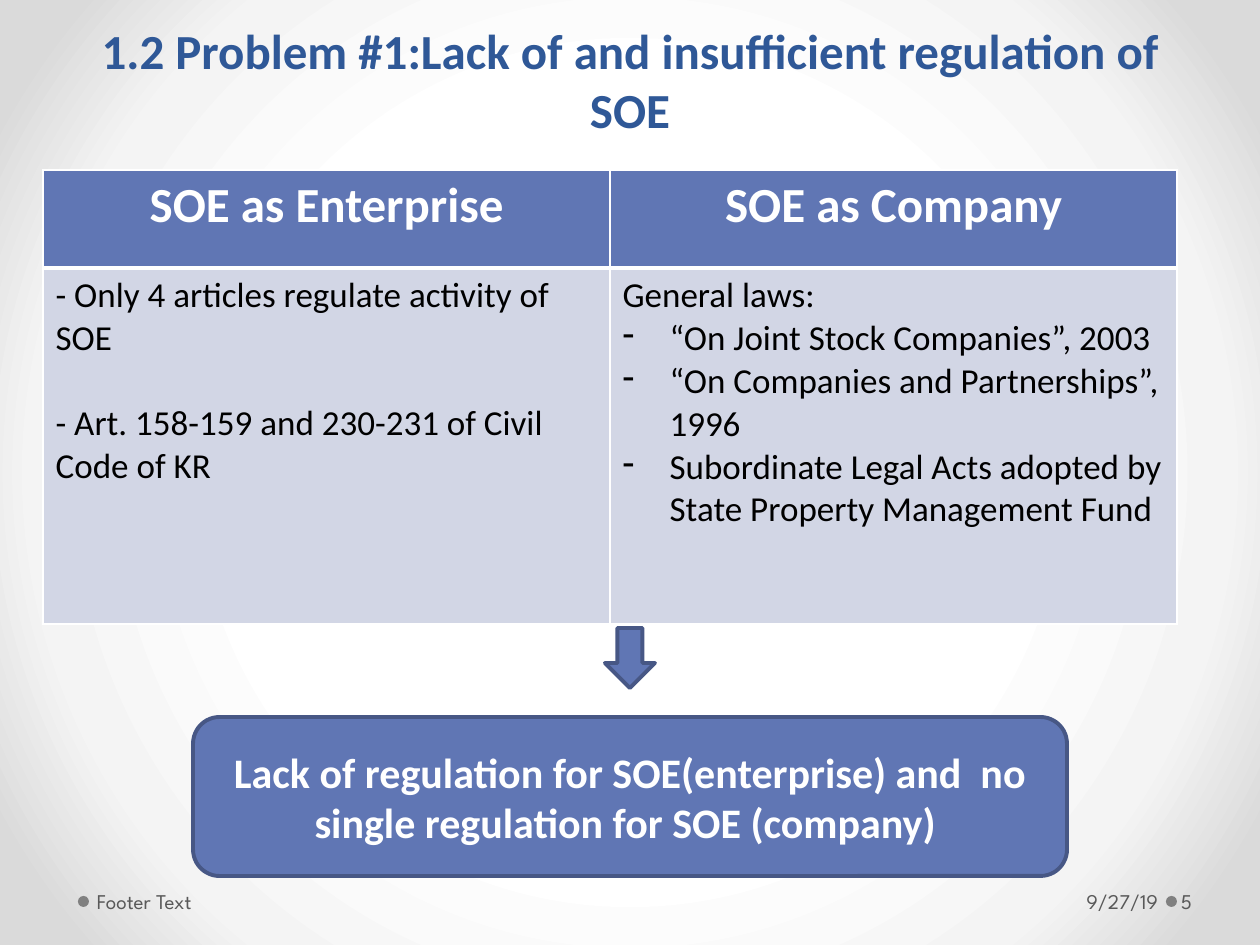
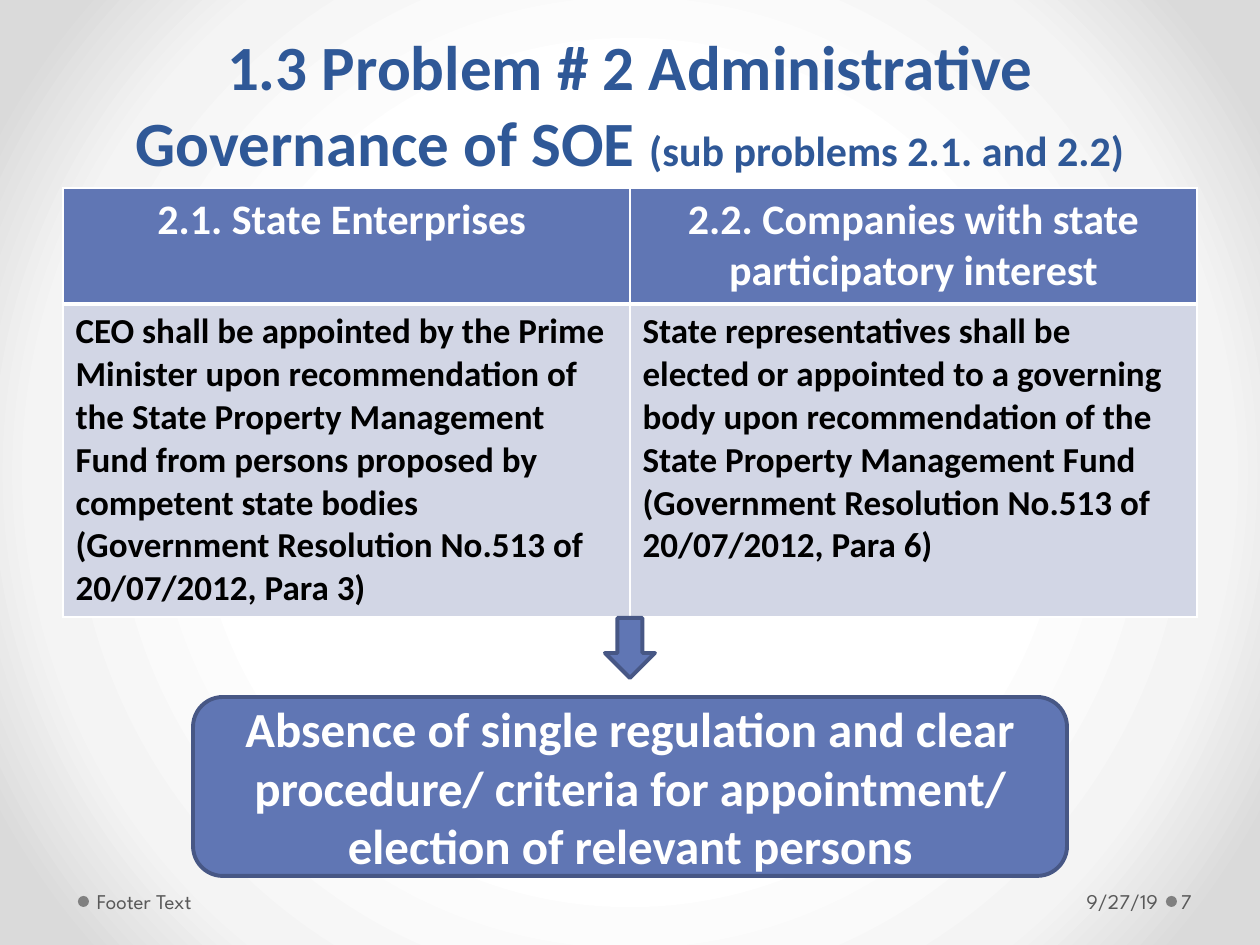
from pptx import Presentation
from pptx.dml.color import RGBColor
from pptx.enum.shapes import MSO_SHAPE
from pptx.enum.text import MSO_ANCHOR, MSO_AUTO_SIZE, PP_ALIGN
from pptx.oxml import parse_xml
from pptx.oxml.ns import nsdecls
from pptx.util import Pt

SCALE = 914400 / 126
BLUE = RGBColor(0x60, 0x76, 0xB4)
EDGE = RGBColor(0x47, 0x57, 0x85)
NAVY = RGBColor(0x2F, 0x58, 0x97)
PALE = RGBColor(0xD2, 0xD6, 0xE5)
DOT = RGBColor(0x80, 0x80, 0x80)
GRAY = RGBColor(0x59, 0x59, 0x59)
WHITE = RGBColor(0xFF, 0xFF, 0xFF)
BLACK = RGBColor(0x00, 0x00, 0x00)
STOPS = ((50, WHITE), (76, RGBColor(0xF4, 0xF4, 0xF4)), (92, RGBColor(0xDA, 0xDA, 0xDA)))
MAIN = "Calibri"
SMALL = "League Spartan"
MID, LEFT, RIGHT = PP_ALIGN.CENTER, PP_ALIGN.LEFT, PP_ALIGN.RIGHT


def px(num):
    return round(num * SCALE)


def apply(item, form):
    for name, value in form.items():
        setattr(item, name, value)


def place(shape, box):
    apply(shape, dict(zip(("left", "top", "width", "height"), map(px, box))))


def add_run(para, text, size, color, bold=True, font=MAIN):
    run = para.add_run()
    run.text = text
    apply(run.font, {"name": font, "size": Pt(size), "bold": bold})
    run.font.color.rgb = color


def add_dash(para):
    props = para._p.get_or_add_pPr()
    for name, value in {"marL": px(47), "indent": -px(47)}.items():
        props.set(name, str(value))
    props.append(parse_xml(f'<a:buChar {nsdecls("a")} char="-"/>'))


def set_back(master):
    master.background.fill.solid()
    stops = "".join(
        f'<a:gs pos="{pos * 1000}"><a:srgbClr val="{color}"/></a:gs>' for pos, color in STOPS
    )
    grad = parse_xml(
        f'<a:gradFill {nsdecls("a")} rotWithShape="1"><a:gsLst>{stops}</a:gsLst>'
        '<a:path path="circle"><a:fillToRect l="50000" t="50000" r="50000" b="50000"/>'
        "</a:path></a:gradFill>"
    )
    solid = master.element.xpath("./p:cSld/p:bg/p:bgPr/a:solidFill")[0]
    solid.getparent().replace(solid, grad)


def add_form(slide, kind, box, fill, edge=None):
    shape = slide.shapes.add_shape(kind, *map(px, box))
    shape.shadow.inherit = False
    shape.fill.solid()
    shape.fill.fore_color.rgb = fill
    if edge is None:
        shape.line.fill.background()
    else:
        shape.line.color.rgb = edge
        shape.line.width = Pt(2.25)
    return shape


def add_title(slide, top, runs):
    title = slide.shapes.title
    place(title, (63, top, 1134, 113))
    apply(title.text_frame, {
        "auto_size": MSO_AUTO_SIZE.NONE,
        "vertical_anchor": MSO_ANCHOR.BOTTOM,
        "word_wrap": True,
    })
    para = title.text_frame.paragraphs[0]
    para.alignment = MID
    for text, size in runs:
        add_run(para, text, size, NAVY)


def add_edge(cell, sides):
    props = cell._tc.get_or_add_tcPr()
    for spot, (side, width) in enumerate(sides.items()):
        props.insert(spot, parse_xml(
            f'<a:ln{side} {nsdecls("a")} w="{Pt(width)}"><a:solidFill>'
            f'<a:srgbClr val="{WHITE}"/></a:solidFill></a:ln{side}>'
        ))


def fill_cell(cell, lines, fill, form, align, sides):
    cell.fill.solid()
    cell.fill.fore_color.rgb = fill
    add_edge(cell, sides)
    frame = cell.text_frame
    for spot, (text, kind) in enumerate(lines):
        para = frame.add_paragraph() if spot else frame.paragraphs[0]
        para.alignment = align
        if kind == "dash":
            add_dash(para)
        elif kind == "gap":
            para.space_before = Pt(24)
        add_run(para, text, **form)


def add_grid(slide, left, top, highs, heads, cells, size, bold):
    shape = slide.shapes.add_table(2, 2, px(left), px(top), px(1134), px(sum(highs)))
    table = shape.table
    apply(table, {"first_row": False, "horz_banding": False})
    for row, high in zip(table.rows, highs):
        row.height = px(high)
    head = {"size": size, "color": WHITE}
    body = {"size": 20, "color": BLACK, "bold": bold}
    for col in range(2):
        fill_cell(table.cell(0, col), [(heads[col], "")], BLUE, head, MID,
                  {"L": 1, "R": 1, "T": 1, "B": 3})
        fill_cell(table.cell(1, col), cells[col], PALE, body, LEFT,
                  {"L": 1, "R": 1, "T": 3, "B": 1})


def add_note(slide, left, width, text, align, pads):
    box = slide.shapes.add_textbox(*map(px, (left, 876, width, 50)))
    frame = box.text_frame
    apply(frame, {
        "word_wrap": True,
        "vertical_anchor": MSO_ANCHOR.MIDDLE,
        "margin_left": px(pads[0]),
        "margin_right": px(pads[1]),
    })
    para = frame.paragraphs[0]
    para.alignment = align
    add_run(para, text, 12, GRAY, False, SMALL)


def add_foot(slide, page):
    for left in (1166, 78):
        add_form(slide, MSO_SHAPE.OVAL, (left, 896, 11, 11), DOT)
    add_note(slide, 877, 287, "9/27/19", RIGHT, (12, 6))
    add_note(slide, 91, 392, "Footer Text", LEFT, (6, 12))
    add_note(slide, 1177, 77, page, LEFT, (4, 6))


def add_result(slide, tip, top, text, size):
    add_form(slide, MSO_SHAPE.DOWN_ARROW, (605, tip, 50, 60), BLUE, EDGE)
    box = add_form(slide, MSO_SHAPE.ROUNDED_RECTANGLE, (193, top, 874, 876 - top), BLUE, EDGE)
    apply(box.text_frame, {"word_wrap": True, "vertical_anchor": MSO_ANCHOR.MIDDLE})
    para = box.text_frame.paragraphs[0]
    para.alignment = MID
    add_run(para, text, size, WHITE)


def main():
    deck = Presentation()
    apply(deck, {"slide_width": px(1260), "slide_height": px(945)})
    set_back(deck.slide_master)
    plain = deck.slide_layouts.get_by_name("Title Only")

    laws = deck.slides.add_slide(plain)
    add_title(laws, 32, [("1.2 Problem #1:Lack of and insufficient regulation of SOE", 28)])
    add_grid(laws, 43, 170, (98, 356), ("SOE as Enterprise", "SOE as Company"), (
        [
            ("- Only 4 articles regulate activity of SOE", ""),
            ("- Art. 158-159 and 230-231 of Civil Code of KR", "gap"),
        ],
        [
            ("General laws:", ""),
            ("“On Joint Stock Companies”, 2003", "dash"),
            ("“On Companies and Partnerships”, 1996", "dash"),
            ("Subordinate Legal Acts adopted by State Property Management Fund", "dash"),
        ],
    ), 28, False)
    add_foot(laws, "5")
    add_result(laws, 628, 717, "Lack of regulation for SOE(enterprise) and  no single "
               "regulation for SOE (company) ", 24)

    posts = deck.slides.add_slide(plain)
    add_title(posts, 72, [
        ("1.3 Problem # 2 Administrative Governance of SOE ", 36),
        ("(sub problems 2.1. and 2.2)", 24),
    ])
    add_grid(posts, 63, 188, (116, 313), (
        "2.1. State Enterprises ",
        "2.2. Companies with state participatory interest",
    ), (
        [("CEO shall be appointed by the Prime Minister upon recommendation of the State "
          "Property Management Fund from persons proposed by competent state bodies "
          "(Government Resolution No.513 of 20/07/2012, Para 3)", "")],
        [("State representatives shall be elected or appointed to a governing body upon "
          "recommendation of the State Property Management Fund "
          "(Government Resolution No.513 of 20/07/2012, Para 6)", "")],
    ), 24, True)
    add_foot(posts, "7")
    add_result(posts, 618, 697, "Absence of single regulation and clear procedure/ criteria "
               "for appointment/ election of relevant persons", 28)

    deck.save("out.pptx")


if __name__ == "__main__":
    main()
